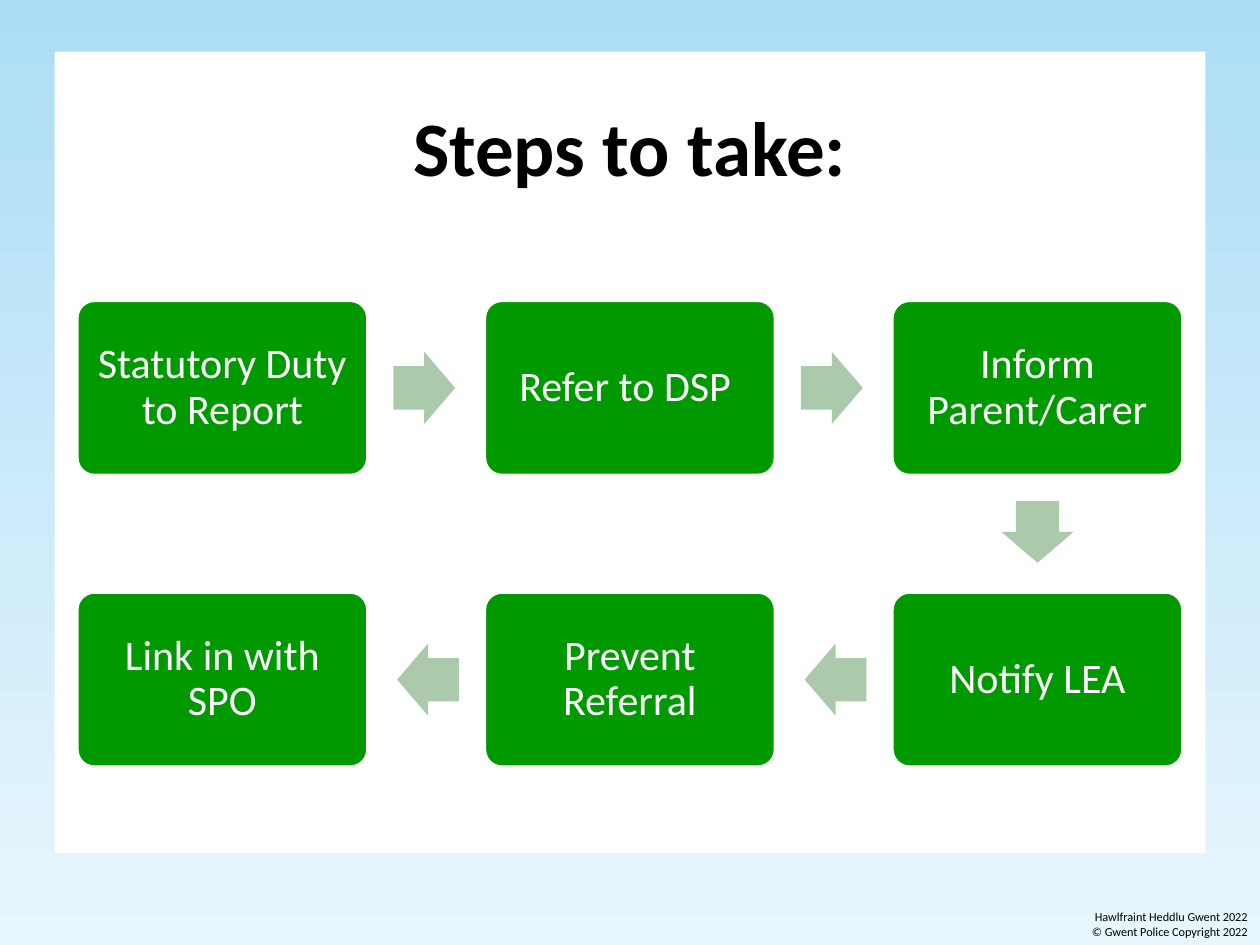
"""Build the slide with the six steps to take, as a snaking process flow."""
from dataclasses import dataclass
from itertools import pairwise

from pptx import Presentation
from pptx.dml.color import RGBColor
from pptx.enum import shapes, text
from pptx.util import Pt


@dataclass(frozen=True)
class Theme:
    font: str = "Calibri"
    sky_top: str = "ACDDF6"
    sky_bottom: str = "E8F6FD"
    white: str = "FFFFFF"
    black: str = "000000"
    step: str = "009900"
    arrow: str = "ABCAAB"
    title_size: int = 44
    step_size: int = 24
    footer_size: int = 7


THEME = Theme()
COLUMNS = 3
LEFT, TOP = 43.9, 171.6
STEP_W, STEP_H = 166.3, 100.1
PITCH_X, PITCH_Y = 232.9, 166.7
ARROW_W, ARROW_H, ARROW_GAP = 35.3, 41.2, 14.6
STEPS = [
    "Statutory Duty to Report",
    "Refer to DSP ",
    "Inform Parent/Carer",
    "Notify LEA",
    "Prevent Referral",
    "Link in with SPO",
]
COPYRIGHT = ["Hawlfraint Heddlu Gwent 2022", "© Gwent Police Copyright 2022"]


def rgb(value):
    return RGBColor.from_string(value)


def style(p, size, color, align, bold=False):
    p.alignment = align
    p.font.name = THEME.font
    p.font.size = Pt(size)
    p.font.bold = bold
    p.font.color.rgb = rgb(color)


def paint_background(s):
    fill = s.background.fill
    fill.gradient()
    fill.gradient_angle = 270
    for stop, color in zip(fill.gradient_stops, (THEME.sky_top, THEME.sky_bottom)):
        stop.color.rgb = rgb(color)


def add_block(s, kind, x, y, w, h, color):
    sp = s.shapes.add_shape(kind, Pt(x), Pt(y), Pt(w), Pt(h))
    sp.shadow.inherit = False
    sp.fill.solid()
    sp.fill.fore_color.rgb = rgb(color)
    sp.line.fill.background()
    return sp


def add_panel(s):
    sp = add_block(s, shapes.MSO_SHAPE.RECTANGLE, 31.2, 29.5, 657.6, 458, THEME.white)
    s.shapes.element.insert(2, sp.element)


def set_title(s, words):
    title = s.shapes.title
    title.left, title.top, title.width, title.height = Pt(43.2), Pt(39.6), Pt(633.6), Pt(87)
    title.text = words
    tf = title.text_frame
    tf.vertical_anchor = text.MSO_ANCHOR.MIDDLE
    style(tf.paragraphs[0], THEME.title_size, THEME.black, text.PP_ALIGN.CENTER, bold=True)


def add_footer(s, lines):
    sp = s.shapes.add_textbox(Pt(571), Pt(509.8), Pt(149), Pt(30.2))
    tf = sp.text_frame
    tf.word_wrap = True
    tf.vertical_anchor = text.MSO_ANCHOR.BOTTOM
    tf.text = "\n".join(lines)
    for p in tf.paragraphs:
        style(p, THEME.footer_size, THEME.black, text.PP_ALIGN.RIGHT)


def add_step(s, cx, cy, words):
    sp = add_block(s, shapes.MSO_SHAPE.ROUNDED_RECTANGLE,
                   cx - STEP_W / 2, cy - STEP_H / 2, STEP_W, STEP_H, THEME.step)
    sp.adjustments[0] = 0.1
    sp.line.color.rgb = rgb(THEME.white)
    sp.line.width = Pt(2)
    tf = sp.text_frame
    tf.word_wrap = True
    tf.vertical_anchor = text.MSO_ANCHOR.MIDDLE
    tf.margin_left = tf.margin_right = tf.margin_top = tf.margin_bottom = Pt(7.2)
    tf.text = words
    p = tf.paragraphs[0]
    p.line_spacing = 0.9
    style(p, THEME.step_size, THEME.white, text.PP_ALIGN.CENTER)


def add_arrow(s, start, end):
    (x, y), (next_x, next_y) = start, end
    reach = ARROW_GAP + ARROW_W / 2
    if next_y > y:
        rotation, y = 90, y + STEP_H / 2 + reach
    elif next_x > x:
        rotation, x = 0, x + STEP_W / 2 + reach
    else:
        rotation, x = 180, x - STEP_W / 2 - reach
    sp = add_block(s, shapes.MSO_SHAPE.RIGHT_ARROW,
                   x - ARROW_W / 2, y - ARROW_H / 2, ARROW_W, ARROW_H, THEME.arrow)
    sp.adjustments[0] = 0.6
    sp.adjustments[1] = 0.5
    sp.rotation = rotation


def step_center(index):
    row, column = divmod(index, COLUMNS)
    if row % 2:
        column = COLUMNS - 1 - column
    return LEFT + STEP_W / 2 + column * PITCH_X, TOP + STEP_H / 2 + row * PITCH_Y


def add_flow(s, steps):
    centers = [step_center(i) for i in range(len(steps))]
    for (cx, cy), words in zip(centers, steps):
        add_step(s, cx, cy, words)
    for start, end in pairwise(centers):
        add_arrow(s, start, end)


def main():
    prs = Presentation()
    prs.slide_width, prs.slide_height = Pt(720), Pt(540)
    s = prs.slides.add_slide(prs.slide_layouts[5])
    paint_background(s)
    add_panel(s)
    add_footer(s, COPYRIGHT)
    set_title(s, "Steps to take:")
    add_flow(s, STEPS)
    prs.save("out.pptx")


if __name__ == "__main__":
    main()
